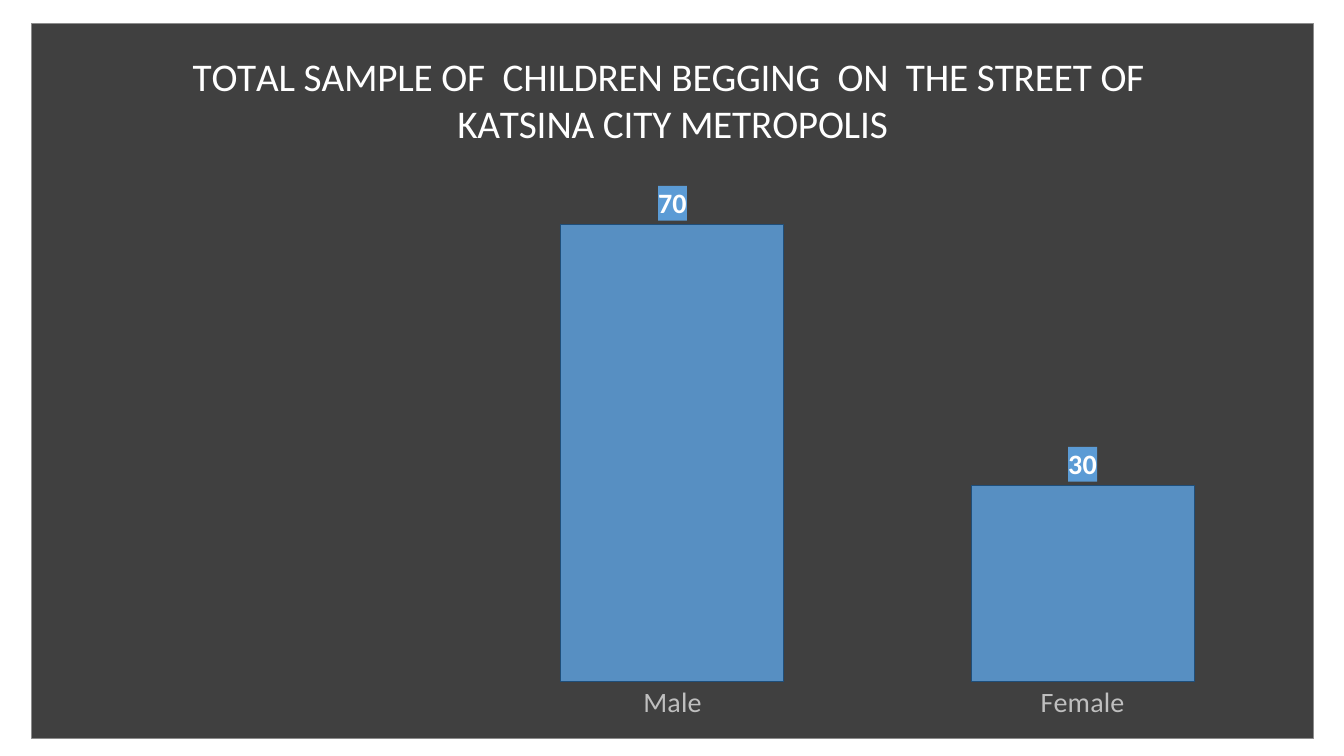
from pptx import Presentation
from pptx import util as u
from pptx.chart.data import CategoryChartData
from pptx.dml.color import RGBColor
from pptx.enum import chart as charts
from pptx.oxml import parse_xml
from pptx.oxml.ns import nsdecls, qn

WHITE = RGBColor(0xFF, 0xFF, 0xFF)
SILVER = RGBColor(0xBF, 0xBF, 0xBF)
CHARCOAL = RGBColor(0x40, 0x40, 0x40)
GRAY = RGBColor(0x8C, 0x8C, 0x8C)
BLUE = RGBColor(0x5B, 0x9B, 0xD5)
NAVY = RGBColor(0x1F, 0x4E, 0x79)
FONT = "Calibri"
TITLE = ("TOTAL SAMPLE OF  CHILDREN BEGGING  ON  THE STREET OF  "
         "KATSINA CITY METROPOLIS")


def style_font(font, size, color, bold=False):
    font.name = FONT
    font.size = u.Pt(size)
    font.bold = bold
    font.color.rgb = color


def area_format(fill, border=None, width=0):
    """Return a c:spPr element, for chart parts without a public format."""
    line = ""
    if border is not None:
        line = (f'<a:ln w="{u.Pt(width)}"><a:solidFill>'
                f'<a:srgbClr val="{border}"/></a:solidFill></a:ln>')
    return parse_xml(f'<c:spPr {nsdecls("c", "a")}><a:solidFill>'
                     f'<a:srgbClr val="{fill}"/></a:solidFill>{line}</c:spPr>')


def place_plot(chart, x, y, width, height):
    """Fix the inner plot area, in fractions of the chart."""
    plot_area = chart._chartSpace.chart.plotArea
    for layout in plot_area.findall(qn("c:layout")):
        plot_area.remove(layout)
    plot_area.insert(0, parse_xml(
        f'<c:layout {nsdecls("c")}><c:manualLayout>'
        '<c:layoutTarget val="inner"/><c:xMode val="edge"/><c:yMode val="edge"/>'
        f'<c:x val="{x}"/><c:y val="{y}"/><c:w val="{width}"/><c:h val="{height}"/>'
        '</c:manualLayout></c:layout>'))


def style_title(chart):
    frame = chart.chart_title.text_frame
    frame.text = TITLE
    style_font(frame.paragraphs[0].runs[0].font, 28, WHITE)
    chart.chart_title.include_in_layout = False


def style_axes(chart):
    category = chart.category_axis
    category.major_tick_mark = charts.XL_TICK_MARK.NONE
    category.format.line.fill.background()
    style_font(category.tick_labels.font, 20, SILVER)
    value = chart.value_axis
    value.minimum_scale, value.maximum_scale = 0, 80
    value.has_major_gridlines = False
    value.visible = False


def style_columns(plot):
    plot.gap_width = 84
    plot.vary_by_categories = False
    series = plot.series[0]
    series.format.fill.solid()
    series.format.fill.fore_color.rgb = BLUE
    color = series._element.spPr.find(".//" + qn("a:srgbClr"))
    color.append(parse_xml(f'<a:alpha {nsdecls("a")} val="88000"/>'))
    series.format.line.color.rgb = NAVY
    series.format.line.width = u.Pt(0.75)

    labels = series.data_labels
    labels.show_value = True
    labels.position = charts.XL_LABEL_POSITION.OUTSIDE_END
    style_font(labels.font, 20, WHITE, bold=True)
    labels._element.find(qn("c:txPr")).addprevious(area_format(BLUE))


def add_sample_chart(page, left, top, width, height):
    data = CategoryChartData()
    data.categories = ["", "Male", "Female"]
    data.add_series("Series 1", [None, 70, 30])
    chart = page.shapes.add_chart(
        charts.XL_CHART_TYPE.COLUMN_CLUSTERED, left, top, width, height, data).chart
    chart.has_legend = False
    chart.font.name = FONT
    chart.font.size = u.Pt(10)
    chart._chartSpace.chart.addnext(area_format(CHARCOAL, GRAY, 0.5))
    style_title(chart)
    style_axes(chart)
    style_columns(chart.plots[0])
    place_plot(chart, 0.02, 0.19, 0.96, 0.73)


def main():
    deck = Presentation()
    deck.slide_width = u.Inches(13.33)
    deck.slide_height = u.Inches(7.5)
    page = deck.slides.add_slide(deck.slide_layouts[6])
    add_sample_chart(page, u.Inches(0.31), u.Inches(0.23),
                     u.Inches(12.72), u.Inches(7.1))
    deck.save("out.pptx")


if __name__ == "__main__":
    main()
